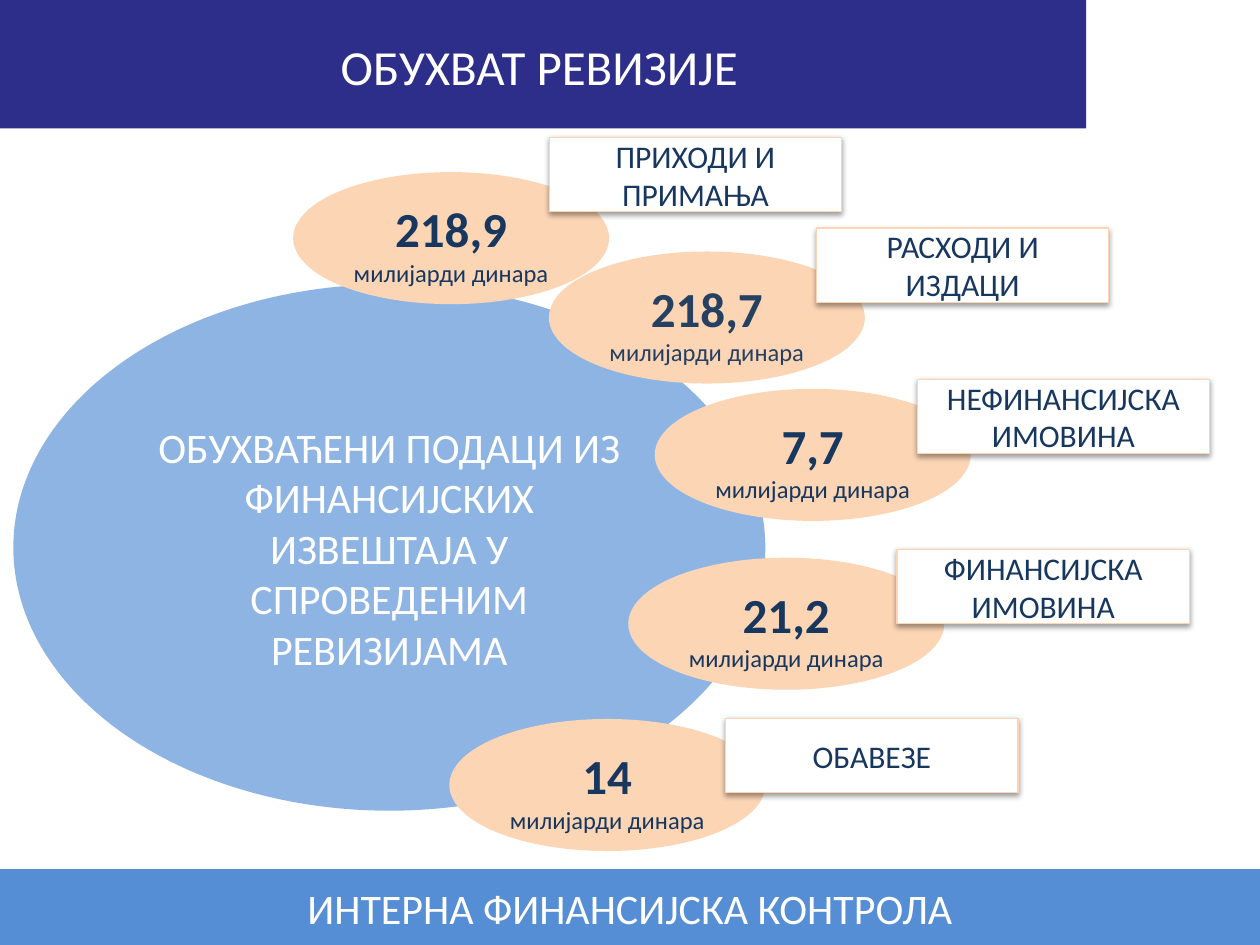
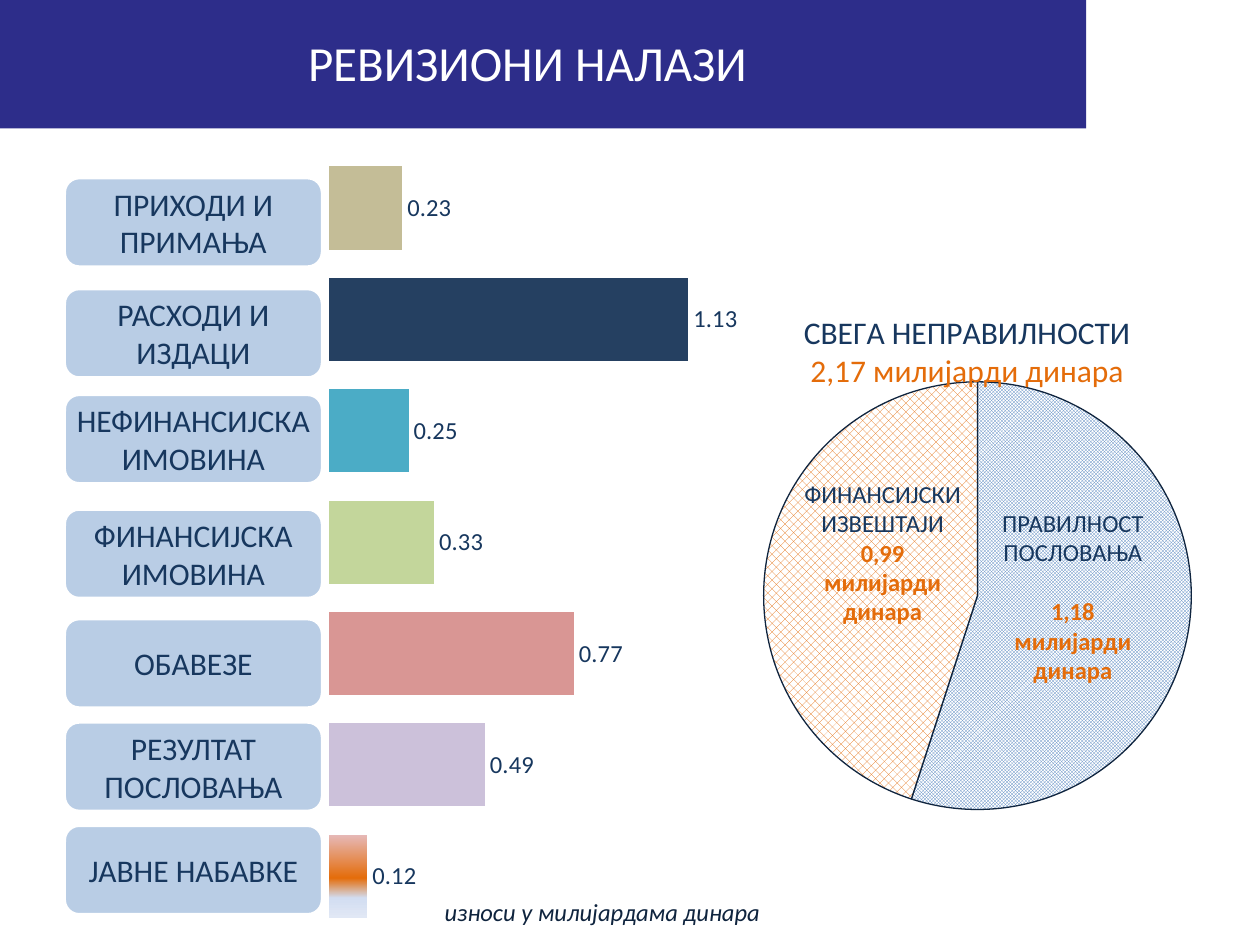
"""Build two slides on audit coverage and audit findings."""
from lxml import etree
from pptx import Presentation
from pptx.chart.data import CategoryChartData
from pptx.dml.color import RGBColor
from pptx.enum.chart import XL_CHART_TYPE, XL_LABEL_POSITION
from pptx.enum.dml import MSO_PATTERN
from pptx.enum.shapes import MSO_SHAPE
from pptx.enum.text import MSO_ANCHOR, PP_ALIGN
from pptx.oxml import parse_xml
from pptx.oxml.ns import nsdecls, qn
from pptx.util import Inches, Pt

FONT = "Calibri"
COLORS = {
    "white": "FFFFFF", "black": "000000", "band": "2D2D8A", "footer": "558ED5",
    "core": "8EB4E3", "peach": "FCD5B5", "navy": "17375E", "steel": "254061",
    "pill": "B9CDE5", "ink": "0F243E", "orange": "E46C0A", "blue": "4F81BD",
    "lilac": "CCC1DA", "rose": "D99694", "green": "C3D69B", "teal": "4BACC6",
    "sand": "C4BD97", "pink": "E6B9B8", "mist": "D2DDF1", "haze": "E1E8F5",
}
CORE_TEXT = "ОБУХВАЋЕНИ ПОДАЦИ ИЗ ФИНАНСИЈСКИХ ИЗВЕШТАЈА У СПРОВЕДЕНИМ РЕВИЗИЈАМА"
UNIT = "милијарди динара"
AMOUNTS = [
    ("218,7", 4.37, 2.01, "steel"),
    ("14", 3.58, 5.72, "navy"),
    ("21,2", 5, 4.44, "navy"),
    ("7,7", 5.21, 3.1, "navy"),
    ("218,9", 2.34, 1.38, "navy"),
]
AMOUNT_LABELS = [
    (["ПРИХОДИ И ПРИМАЊА"], 4.36, 1.09),
    (["РАСХОДИ И ИЗДАЦИ"], 6.48, 1.81),
    (["НЕФИНАНСИЈСКА ИМОВИНА"], 7.28, 3.01),
    (["ФИНАНСИЈСКА", "ИМОВИНА"], 7.12, 4.36),
    (["ОБАВЕЗЕ"], 5.76, 5.7),
]
FINDINGS = [
    ("ПРИХОДИ И ПРИМАЊА", 1.41, 0.23, "sand"),
    ("РАСХОДИ И ИЗДАЦИ", 2.29, 1.13, "steel"),
    ("НЕФИНАНСИЈСКА ИМОВИНА", 3.13, 0.25, "teal"),
    ("ФИНАНСИЈСКА ИМОВИНА", 4.04, 0.33, "green"),
    ("ОБАВЕЗЕ", 4.91, 0.77, "rose"),
    ("РЕЗУЛТАТ ПОСЛОВАЊА", 5.73, 0.49, "lilac"),
    ("ЈАВНЕ НАБАВКЕ", 6.55, 0.12, None),
]
PROCUREMENT_STOPS = [(0, "pink"), (52, "orange"), (76, "mist"), (100, "haze")]
PIE_TITLE = [("СВЕГА НЕПРАВИЛНОСТИ", "navy"), ("2,17 милијарди динара", "orange")]
PIE_SLICES = [
    (55, MSO_PATTERN.SMALL_CHECKER_BOARD, "blue"),
    (45, MSO_PATTERN.PERCENT_50, "orange"),
]
PIE_NOTES = [
    (6.25, 3.75, "ФИНАНСИЈСКИ ИЗВЕШТАЈИ", "0,99", 0),
    (7.76, 3.98, "ПРАВИЛНОСТ ПОСЛОВАЊА", "1,18", 17),
]


def rgb(name):
    return RGBColor.from_string(COLORS[name])


def style_font(font, size, color, bold=False, italic=False):
    font.name, font.size = FONT, Pt(size)
    font.bold, font.italic = bold, italic
    font.color.rgb = rgb(color)


def write(frame, lines, align=PP_ALIGN.CENTER):
    """Write (text, size, color, options) lines, one paragraph each."""
    for index, (text, size, color, options) in enumerate(lines):
        para = frame.add_paragraph() if index else frame.paragraphs[0]
        para.alignment = align
        span = para.add_run()
        span.text = text
        style_font(span.font, size, color, **options)


def add_box(page, kind, area, fill, line=None, width=2, lines=(), inset=None):
    box = page.shapes.add_shape(kind, *map(Inches, area))
    box.shadow.inherit = False
    box.fill.solid()
    box.fill.fore_color.rgb = rgb(fill)
    if line:
        box.line.color.rgb = rgb(line)
        box.line.width = Pt(width)
    else:
        box.line.fill.background()
    frame = box.text_frame
    frame.word_wrap = True
    frame.vertical_anchor = MSO_ANCHOR.MIDDLE
    if inset is not None:
        frame.margin_left = frame.margin_right = Inches(inset)
        frame.margin_top = frame.margin_bottom = Inches(inset)
    write(frame, lines)
    return box


def add_text(page, area, lines, align=PP_ALIGN.CENTER):
    box = page.shapes.add_textbox(*map(Inches, area))
    box.text_frame.word_wrap = True
    write(box.text_frame, lines, align)
    return box.text_frame


def add_page(deck, title, area):
    page = deck.slides.add_slide(deck.slide_layouts[6])
    add_box(page, MSO_SHAPE.RECTANGLE, (-0.02, 0, 8.64, 1.02), "band")
    add_text(page, area, [(title, 28, "white", {})])
    return page


def add_soft_shadow(box):
    effects = box.element.spPr.find(qn("a:effectLst"))
    shadow = etree.SubElement(effects, qn("a:outerShdw"), blurRad="40000",
                              dist="20000", dir="5400000", rotWithShape="0")
    color = etree.SubElement(shadow, qn("a:srgbClr"), val=COLORS["black"])
    etree.SubElement(color, qn("a:alpha"), val="38000")


def set_layout(parent, index, **places):
    """Give a chart part a fixed place, as fractions of the chart."""
    for layout in parent.findall(qn("c:layout")):
        parent.remove(layout)
    target = '<c:layoutTarget val="inner"/>' if "w" in places else ""
    modes = '<c:xMode val="edge"/><c:yMode val="edge"/>'
    sizes = "".join(f'<c:{key} val="{value}"/>' for key, value in places.items())
    parent.insert(index, parse_xml(
        f'<c:layout {nsdecls("c")}><c:manualLayout>{target}{modes}{sizes}'
        "</c:manualLayout></c:layout>"))


def add_chart(page, kind, area, values):
    data = CategoryChartData()
    data.categories = [str(number + 1) for number in range(len(values))]
    data.add_series("Series 1", values)
    chart = page.shapes.add_chart(kind, *map(Inches, area), data).chart
    chart.has_legend = False
    chart.has_title = False
    style_font(chart.font, 18, "black")
    chart.plots[0].vary_by_categories = False
    return chart


def add_findings_chart(page):
    bars = FINDINGS[::-1]
    chart = add_chart(page, XL_CHART_TYPE.BAR_CLUSTERED, (2.51, 1.21, 3.44, 6.38),
                      [value for _, _, value, _ in bars])
    plot = chart.plots[0]
    plot.gap_width = 34
    chart.value_axis.minimum_scale, chart.value_axis.maximum_scale = 0, 1.2
    chart.value_axis.has_major_gridlines = False
    chart.value_axis.visible = chart.category_axis.visible = False
    plot.has_data_labels = True
    labels = plot.data_labels
    labels.show_value = True
    labels.number_format, labels.number_format_is_linked = "#,##0.00", False
    labels.position = XL_LABEL_POSITION.OUTSIDE_END
    style_font(labels.font, 14, "navy")
    for index, (_, _, _, color) in enumerate(bars):
        fill = plot.series[0].points[index].format.fill
        if color:
            fill.solid()
            fill.fore_color.rgb = rgb(color)
        else:
            fill.gradient()
            fill.gradient_angle = 270
    stops = chart.element.find(".//" + qn("a:gsLst"))
    for stop in list(stops):
        stops.remove(stop)
    for percent, color in PROCUREMENT_STOPS:
        stop = etree.SubElement(stops, qn("a:gs"), pos=str(percent * 1000))
        etree.SubElement(stop, qn("a:srgbClr"), val=COLORS[color])
    set_layout(chart.element.find(".//" + qn("c:plotArea")), 0,
               x=0.03, y=0, w=0.88, h=0.97)


def add_pie(page):
    chart = add_chart(page, XL_CHART_TYPE.PIE, (5.91, 1.85, 3.66, 4.92),
                      [value for value, _, _ in PIE_SLICES])
    chart.has_title = True
    write(chart.chart_title.text_frame,
          [(text, 18, color, {}) for text, color in PIE_TITLE])
    for index, (_, pattern, color) in enumerate(PIE_SLICES):
        style = chart.plots[0].series[0].points[index].format
        style.fill.patterned()
        style.fill.pattern = pattern
        style.fill.fore_color.rgb = rgb(color)
        style.fill.back_color.rgb = rgb("white")
        style.line.color.rgb = rgb("ink")
        style.line.width = Pt(0.75)
    set_layout(chart.element.find(".//" + qn("c:title")), 1, x=0.12, y=0.12)
    set_layout(chart.element.find(".//" + qn("c:plotArea")), 0,
               x=0.04, y=0.24, w=0.93, h=0.69)


def build_coverage(deck):
    page = add_page(deck, "ОБУХВАТ РЕВИЗИЈЕ", (-0.04, 0.24, 8.64, 0.57))
    add_box(page, MSO_SHAPE.OVAL, (0.12, 2.27, 5.94, 4.15), "core", "core",
            lines=[(CORE_TEXT, 24, "white", {})])
    for amount, left, top, color in AMOUNTS:
        oval = add_box(page, MSO_SHAPE.OVAL, (left, top, 2.48, 1.02), "peach", "peach",
                       lines=[(amount, 28, color, {"bold": True}), (UNIT, 14, color, {})],
                       inset=0.05)
        oval.text_frame.vertical_anchor = MSO_ANCHOR.TOP
    for texts, left, top in AMOUNT_LABELS:
        label = add_box(page, MSO_SHAPE.RECTANGLE, (left, top, 2.32, 0.59),
                        "white", "peach", 0.75,
                        [(text, 18, "navy", {}) for text in texts])
        add_soft_shadow(label)
    add_box(page, MSO_SHAPE.RECTANGLE, (-0.02, 6.91, 10.04, 0.59), "footer", "footer",
            lines=[("ИНТЕРНА ФИНАНСИЈСКА КОНТРОЛА", 24, "white", {})])


def build_findings(deck):
    page = add_page(deck, "РЕВИЗИОНИ НАЛАЗИ", (-0.01, 0.21, 8.39, 0.57))
    add_text(page, (3.43, 7.07, 4.33, 0.34),
             [("износи у милијардама динара", 14, "ink", {"italic": True})],
             PP_ALIGN.LEFT)
    add_pie(page)
    for left, top, name, amount, gap in PIE_NOTES:
        frame = add_text(page, (left, top, 1.51, 1.28), [
            (name, 14, "navy", {}),
            (amount, 14, "orange", {"bold": True}),
            (UNIT, 14, "orange", {"bold": True}),
        ])
        frame.paragraphs[1].space_before = Pt(gap)
    add_findings_chart(page)
    for name, top, _, _ in FINDINGS:
        add_box(page, MSO_SHAPE.ROUNDED_RECTANGLE, (0.51, top, 2.05, 0.71),
                "pill", "white", lines=[(name, 18, "navy", {})], inset=0.04)


def main():
    deck = Presentation()
    deck.slide_width, deck.slide_height = Inches(10), Inches(7.5)
    build_coverage(deck)
    build_findings(deck)
    deck.save("out.pptx")


if __name__ == "__main__":
    main()
